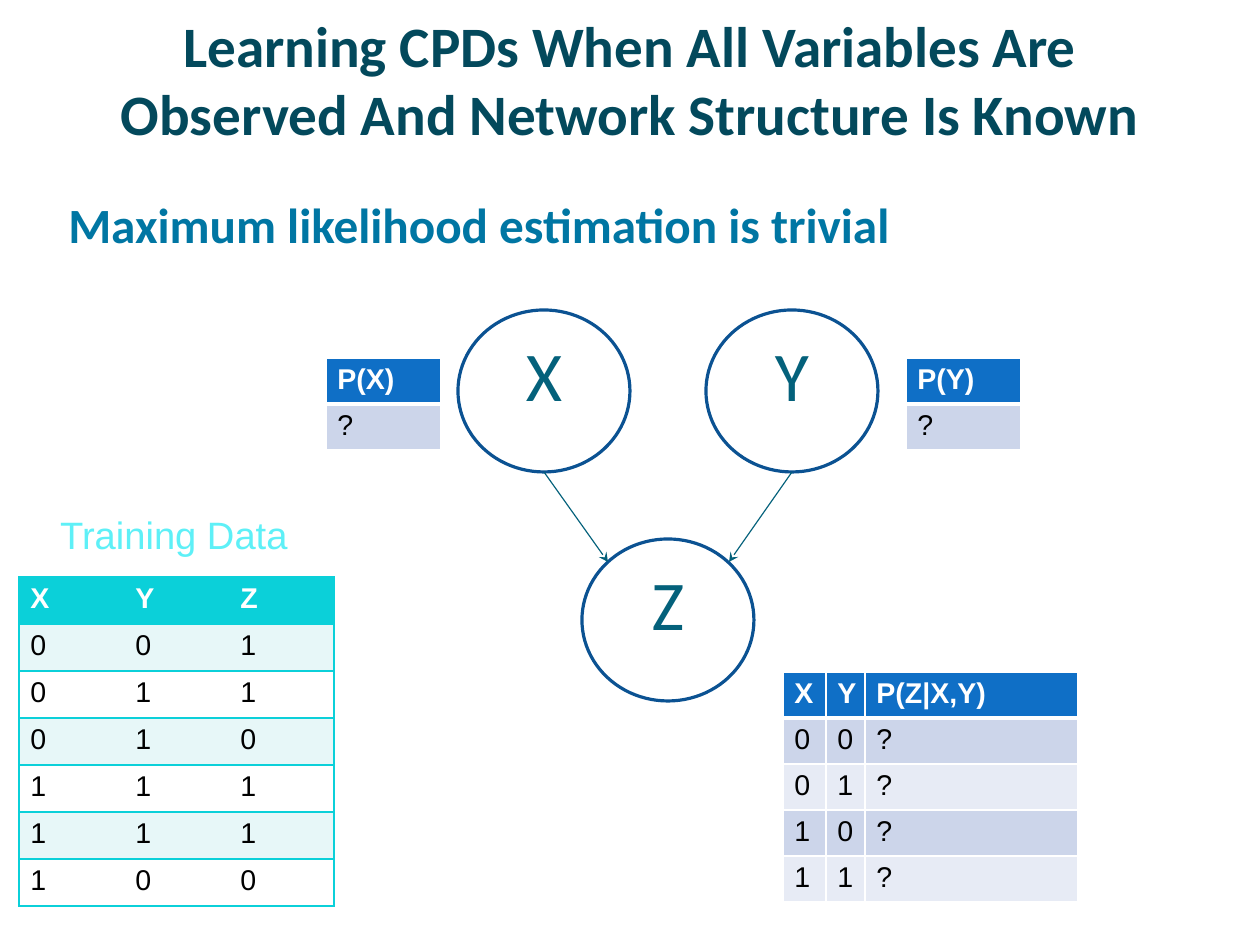
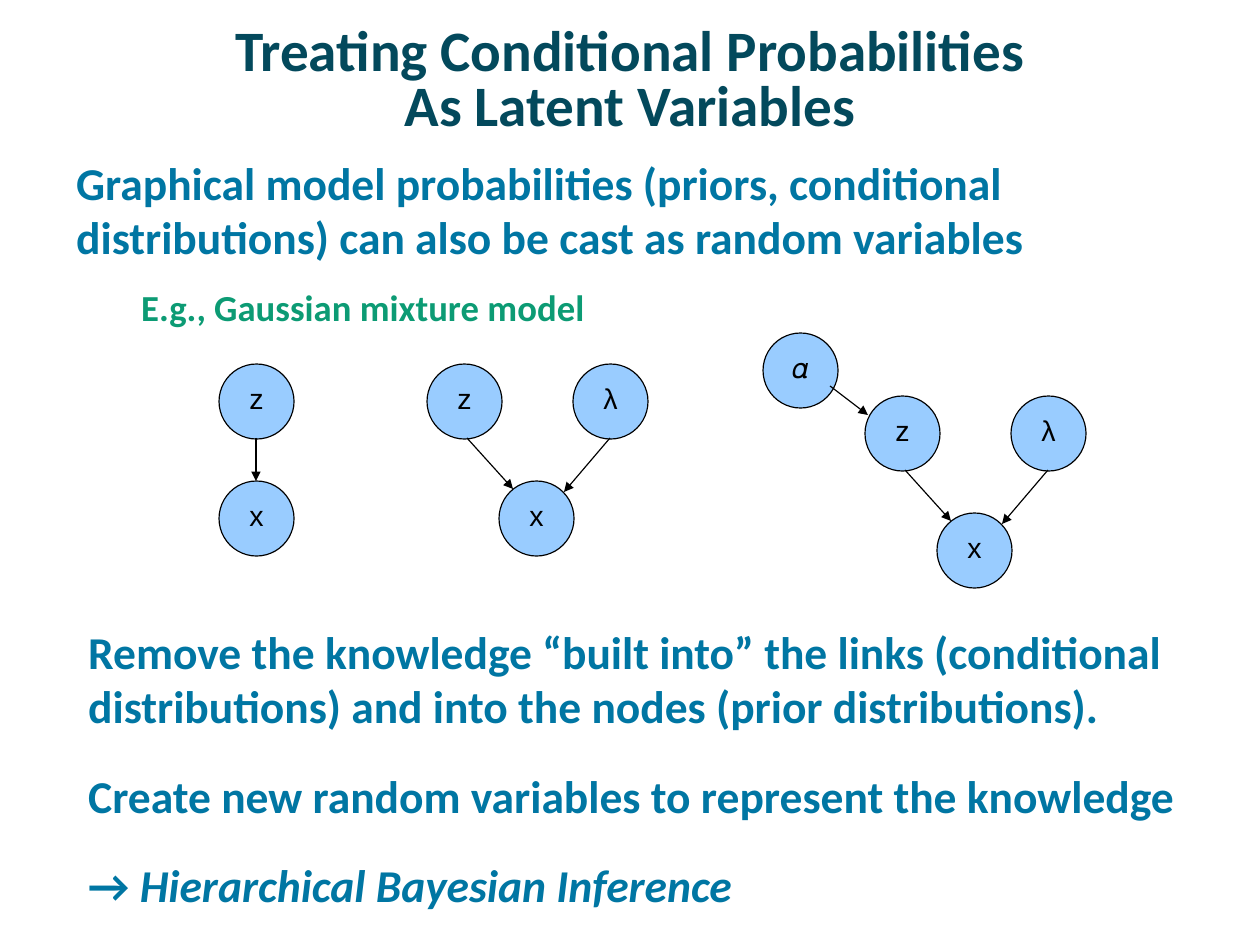
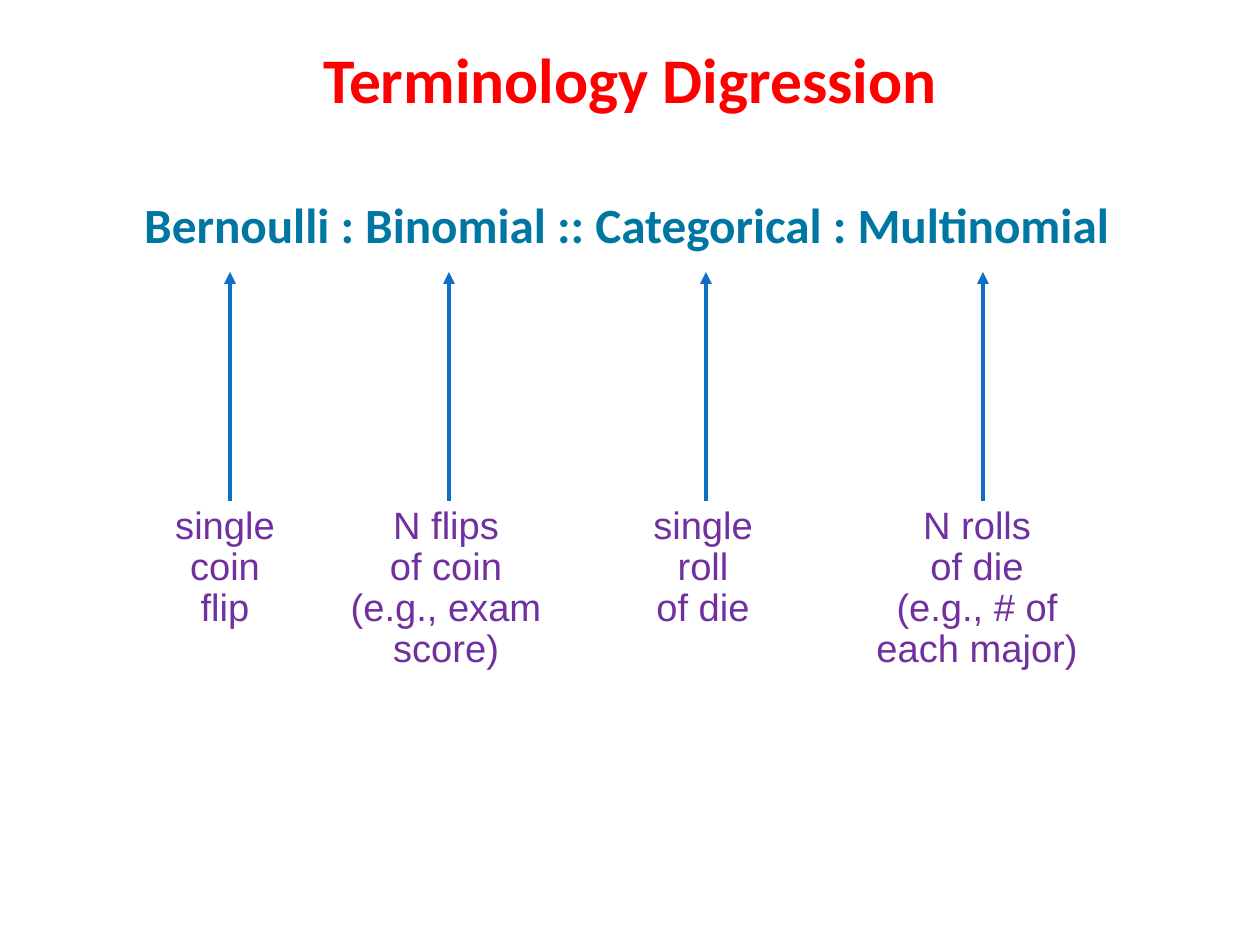
from lxml.etree import SubElement
from pptx import Presentation
from pptx.dml.color import RGBColor
from pptx.enum.shapes import MSO_CONNECTOR, MSO_SHAPE
from pptx.enum.text import MSO_ANCHOR as ANCHOR, PP_ALIGN as ALIGN
from pptx.oxml.ns import qn
from pptx.util import Pt

SCALE = 8000  # EMU in one px
COLORS = {
    "title": "03495C", "alert": "FF0000", "body": "0076A3", "example": "0C9B74",
    "white": "FFFFFF", "black": "000000", "ring": "0B5292", "letter": "04617B",
    "node": "99CCFF", "blue": "0F6FC6", "band": "CCD5EA", "pale": "E7EBF5",
    "cyan": "0BD0D9", "mint": "E7F7F8", "label": "5EF0F7", "caption": "7030A0",
}
RGB = {name: RGBColor.from_string(value) for name, value in COLORS.items()}


def px(*values):
    return [value * SCALE for value in values]


def write(frame, lines, size, color, font="Calibri", bold=False,
          align=ALIGN.LEFT, spacing=None, wrap=True):
    frame.text = "\n".join(lines)
    frame.word_wrap = wrap
    for para in frame.paragraphs:
        para.alignment = align
        if spacing:
            para.line_spacing = spacing
        para.font.name = font
        para.font.size = Pt(size)
        para.font.bold = bold
        para.font.color.rgb = RGB[color]


deck = Presentation()
deck.slide_width, deck.slide_height = px(1260, 945)
learning, latent, terms = [deck.slides.add_slide(deck.slide_layouts[6]) for _ in range(3)]

# Titles
for page, text, top, size, color, spacing in (
    (learning, "Learning CPDs When All Variables Are Observed And Network Structure Is Known",
     21, 36, "title", None),
    (latent, "Treating Conditional Probabilities\vAs Latent Variables", 25, 36, "title", 0.81),
    (terms, "Terminology Digression", 21, 40, "alert", None),
):
    box = page.shapes.add_textbox(*px(63, top, 1134, 115))
    box.text_frame.vertical_anchor = ANCHOR.MIDDLE
    write(box.text_frame, [text], size, color, bold=True, align=ALIGN.CENTER, spacing=spacing)

# One-line statements
for page, text, align in (
    (learning, "Maximum likelihood estimation is trivial", ALIGN.LEFT),
    (terms, "Bernoulli : Binomial :: Categorical : Multinomial", ALIGN.CENTER),
):
    box = page.shapes.add_textbox(*px(57, 189, 1139, 72))
    write(box.text_frame, [text], 31, "body", bold=True, align=align)

# Argument on latent variables; the second gap leaves room for the graphs
box = latent.shapes.add_textbox(*px(65, 149, 1130, 781))
write(box.text_frame, [
    "Graphical model probabilities (priors, conditional distributions) "
    "can also be cast as random variables",
    "E.g., Gaussian mixture model",
    "Remove the knowledge “built into” the links (conditional distributions) "
    "and into the nodes (prior distributions).",
    "Create new random variables to represent the knowledge",
    "→ ",
], 28.7, "body", bold=True)
paras = box.text_frame.paragraphs
for para, indent, before in zip(paras[1:], (65, 12, 12, 12), (13, 186, 21.8, 21.8)):
    para._p.get_or_add_pPr().set("marL", str(indent * SCALE))
    para.space_before = Pt(before)
paras[1].font.size = Pt(23.1)
paras[1].font.color.rgb = RGB["example"]
span = paras[-1].add_run()
span.text = "Hierarchical Bayesian Inference"
span.font.italic = True

# Graph nodes and arrows
large_nodes = [("X", 458, 310), ("Y", 706, 310), ("Z", 582, 539)]
small_nodes = [("z", 219, 364), ("x", 219, 481), ("𝛼", 763, 333)]
large_arrows = [(544, 472, 608, 562), (792, 472, 729, 562)]
small_arrows = [(256, 438, 256, 481), (830, 386, 868, 415)]
for right, down in ((0, 0), (438, 32)):
    small_nodes += [(name, left + right, top + down) for name, left, top in
                    (("z", 427, 364), ("λ", 573, 364), ("x", 499, 481))]
    small_arrows += [(x1 + right, y1 + down, x2 + right, y2 + down) for x1, y1, x2, y2 in
                     ((467, 438, 513, 489), (610, 438, 564, 492))]

for page, nodes, width, height, fill, line, weight, size, color, font, spacing in (
    (learning, large_nodes, 172, 162, "white", "ring", 2, 44, "letter", "Calibri", 0.41),
    (latent, small_nodes, 75, 75, "node", "black", 0.75, 18, "black", "Arial", 0.81),
):
    for name, left, top in nodes:
        node = page.shapes.add_shape(MSO_SHAPE.OVAL, *px(left, top, width, height))
        node.shadow.inherit = False
        node.fill.solid()
        node.fill.fore_color.rgb = RGB[fill]
        node.line.color.rgb = RGB[line]
        node.line.width = Pt(weight)
        node.text_frame.vertical_anchor = ANCHOR.MIDDLE
        write(node.text_frame, [name], size, color, font, align=ALIGN.CENTER,
              spacing=spacing, wrap=False)

term_arrows = [(x, 501, x, 272) for x in (230, 449, 706, 983)]
for page, arrows, color, weight, head in (
    (learning, large_arrows, "letter", 0.75, "stealth"),
    (latent, small_arrows, "black", 0.75, "triangle"),
    (terms, term_arrows, "blue", 2.5, "triangle"),
):
    for ends in arrows:
        arrow = page.shapes.add_connector(MSO_CONNECTOR.STRAIGHT, *px(*ends))
        arrow.line.color.rgb = RGB[color]
        arrow.line.width = Pt(weight)
        SubElement(arrow.line._get_or_add_ln(), qn("a:tailEnd"), type=head)
        SubElement(arrow._element.spPr, qn("a:effectLst"))

# Tables: header row first; the training table has no inner vertical rules
for left, top, widths, row_height, rows, head, bands, rule in (
    (783, 672, (43, 39, 213), 46, ("X Y P(Z|X,Y)", "0 0 ?", "0 1 ?", "1 0 ?", "1 1 ?"),
     "blue", ("band", "pale"), "white"),
    (326, 358, (115,), 46, ("P(X)", "?"), "blue", ("band", "pale"), "white"),
    (906, 358, (115,), 46, ("P(Y)", "?"), "blue", ("band", "pale"), "white"),
    (19, 577, (105, 105, 105), 47,
     ("X Y Z", "0 0 1", "0 1 1", "0 1 0", "1 1 1", "1 1 1", "1 0 0"),
     "cyan", ("mint", "white"), "cyan"),
):
    last = len(widths) - 1
    table = learning.shapes.add_table(
        len(rows), len(widths), *px(left, top, sum(widths), row_height * len(rows))).table
    for column, width in zip(table.columns, widths):
        column.width = width * SCALE
    for i, row in enumerate(rows):
        for j, value in enumerate(row.split()):
            cell = table.cell(i, j)
            write(cell.text_frame, [value], 18, "black" if i else "white", "Arial", bold=i == 0)
            thick = 3 if rule == "white" else 1
            weights = {
                "a:lnL": 1 if rule == "white" or j == 0 else 0,
                "a:lnR": 1 if rule == "white" or j == last else 0,
                "a:lnT": thick if i == 1 else 1,
                "a:lnB": thick if i == 0 else 1,
            }
            borders = cell._tc.get_or_add_tcPr()
            for side, weight in weights.items():
                border = SubElement(borders, qn(side), w=str(Pt(weight)))
                if weight:
                    paint = SubElement(border, qn("a:solidFill"))
                    SubElement(paint, qn("a:srgbClr"), val=COLORS[rule])
                else:
                    SubElement(border, qn("a:noFill"))
            cell.fill.solid()
            cell.fill.fore_color.rgb = RGB[bands[(i - 1) % 2] if i else head]

box = learning.shapes.add_textbox(*px(49, 529, 253, 35))
write(box.text_frame, ["Training Data"], 24, "label", "Arial", spacing=0.41, wrap=False)

# Captions under the arrows
for center, lines in (
    (225, ("single", "coin", "flip")),
    (446, ("N flips", "of coin", "(e.g., exam", "score)")),
    (703, ("single", "roll", "of die")),
    (977, ("N rolls", "of die", "(e.g., # of", "each major)")),
):
    box = terms.shapes.add_textbox(*px(center - 115, 501, 230, 14 + 41 * len(lines)))
    write(box.text_frame, lines, 24, "caption", "Arial", align=ALIGN.CENTER,
          spacing=0.9, wrap=False)

deck.save("out.pptx")
